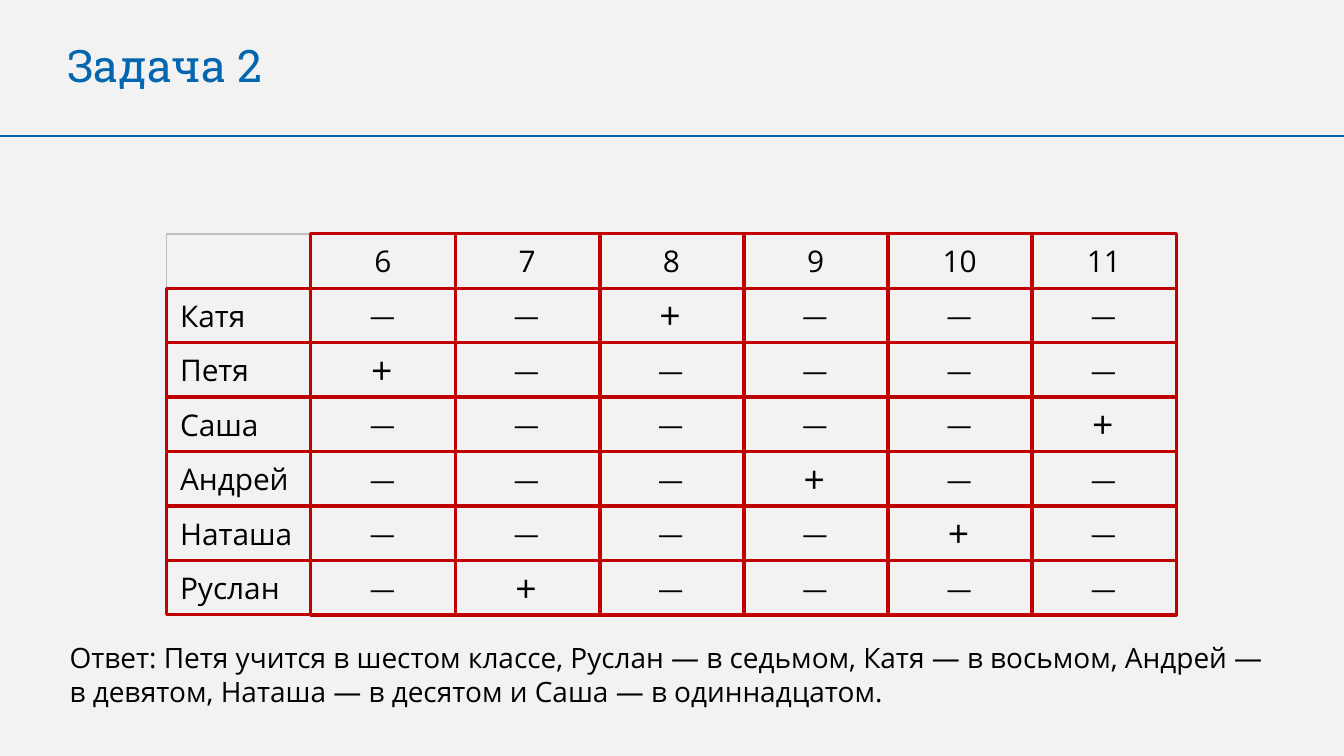
from pptx import Presentation
from pptx.dml.color import RGBColor
from pptx.enum.shapes import MSO_CONNECTOR, MSO_SHAPE
from pptx.enum.text import MSO_ANCHOR, MSO_AUTO_SIZE, PP_ALIGN
from pptx.oxml.ns import qn
from pptx.util import Inches, Pt
from lxml.etree import SubElement

COLORS = {"background": "F2F2F2", "blue": "0066B0", "red": "C00000",
          "black": "000000", "gray": "BFBFBF"}
GRADES = ["6", "7", "8", "9", "10", "11"]
GRADE_OF = {"Катя": "8", "Петя": "6", "Саша": "11",
            "Андрей": "9", "Наташа": "10", "Руслан": "7"}
ANSWER = [
    "Ответ: Петя учится в шестом классе, Руслан — в седьмом, Катя — в восьмом, Андрей —",
    "в девятом, Наташа — в десятом и Саша — в одиннадцатом.",
]
LEFT, TOP, WIDTH, HEIGHT = 1.24, 1.74, 7.51, 2.84
COLUMN_COUNT, ROW_COUNT = len(GRADES) + 1, len(GRADE_OF) + 1
COLUMN_WIDTH, ROW_HEIGHT = WIDTH / COLUMN_COUNT, HEIGHT / ROW_COUNT


def write(text_frame, lines, size, font="Open Sans", color="black",
          align=PP_ALIGN.LEFT, wrap=True):
    text_frame.word_wrap = wrap
    for index, line in enumerate(lines):
        paragraph = text_frame.paragraphs[0] if index == 0 else text_frame.add_paragraph()
        paragraph.alignment = align
        run = paragraph.add_run()
        run.text = line
        run.font.size = Pt(size)
        run.font.name = font
        run.font.color.rgb = RGBColor.from_string(COLORS[color])


def add_frame(left, top, width, height):
    shape = slide.shapes.add_shape(MSO_SHAPE.RECTANGLE, Inches(left), Inches(top),
                                   Inches(width), Inches(height))
    shape.shadow.inherit = False
    shape.fill.background()
    shape.line.color.rgb = RGBColor.from_string(COLORS["red"])
    shape.line.width = Pt(1.5)


# Widescreen slide, 16:9
presentation = Presentation()
presentation.slide_width = Inches(10)
presentation.slide_height = Inches(10 * 9 / 16)
slide = presentation.slides.add_slide(presentation.slide_layouts[5])
slide.background.fill.solid()
slide.background.fill.fore_color.rgb = RGBColor.from_string(COLORS["background"])

# Title and the rule below it
title = slide.shapes.title
title.left, title.top = Inches(0.4), Inches(0.23)
title.width, title.height = Inches(9.2), Inches(0.5)
title.text_frame.auto_size = MSO_AUTO_SIZE.NONE
title.text_frame.vertical_anchor = MSO_ANCHOR.TOP
write(title.text_frame, ["Задача 2"], 24, font="Roboto Slab", color="blue")

rule = slide.shapes.add_connector(MSO_CONNECTOR.STRAIGHT, 0, Inches(1.01),
                                  Inches(10), Inches(1.01))
rule.line.color.rgb = RGBColor.from_string(COLORS["blue"])
rule.line.width = Pt(1)
SubElement(rule._element.spPr, qn("a:effectLst"))

# Table of pupils and grades
table = slide.shapes.add_table(ROW_COUNT, COLUMN_COUNT, Inches(LEFT), Inches(TOP),
                               Inches(WIDTH), Inches(HEIGHT)).table
table.first_row = False
table.horz_banding = False
for cell in table.iter_cells():
    cell.vertical_anchor = MSO_ANCHOR.MIDDLE
    cell.margin_top = cell.margin_bottom = Inches(0.02)
    properties = cell._tc.get_or_add_tcPr()
    for side in ("a:lnL", "a:lnR", "a:lnT", "a:lnB"):
        border = SubElement(properties, qn(side), w=str(Pt(1)))
        fill = SubElement(border, qn("a:solidFill"))
        SubElement(fill, qn("a:srgbClr"), val=COLORS["gray"])
    cell.fill.background()
for column, grade in enumerate(GRADES, start=1):
    write(table.cell(0, column).text_frame, [grade], 16, align=PP_ALIGN.CENTER)
for row, name in enumerate(GRADE_OF, start=1):
    write(table.cell(row, 0).text_frame, [name], 16)

# Red frames around every grade column and pupil row
for column in range(1, COLUMN_COUNT):
    add_frame(LEFT + column * COLUMN_WIDTH, TOP, 1.08, HEIGHT)
for row in range(1, ROW_COUNT):
    add_frame(LEFT, TOP + row * ROW_HEIGHT, WIDTH, 0.4)

# Plus and dash marks
for row, pupil_grade in enumerate(GRADE_OF.values(), start=1):
    for column, grade in enumerate(GRADES, start=1):
        if grade == pupil_grade:
            mark, size, width, height, shift_x, shift_y = "+", 20, 0.36, 0.44, 0.35, -0.02
        else:
            mark, size, width, height, shift_x, shift_y = "—", 13.5, 0.39, 0.33, 0.34, 0.04
        mark_box = slide.shapes.add_textbox(
            Inches(LEFT + column * COLUMN_WIDTH + shift_x),
            Inches(TOP + row * ROW_HEIGHT + shift_y), Inches(width), Inches(height))
        write(mark_box.text_frame, [mark], size, wrap=False)

# Answer
answer_box = slide.shapes.add_textbox(Inches(0.42), Inches(4.72), Inches(9.2), Inches(0.61))
write(answer_box.text_frame, ANSWER, 15)

presentation.save("out.pptx")
